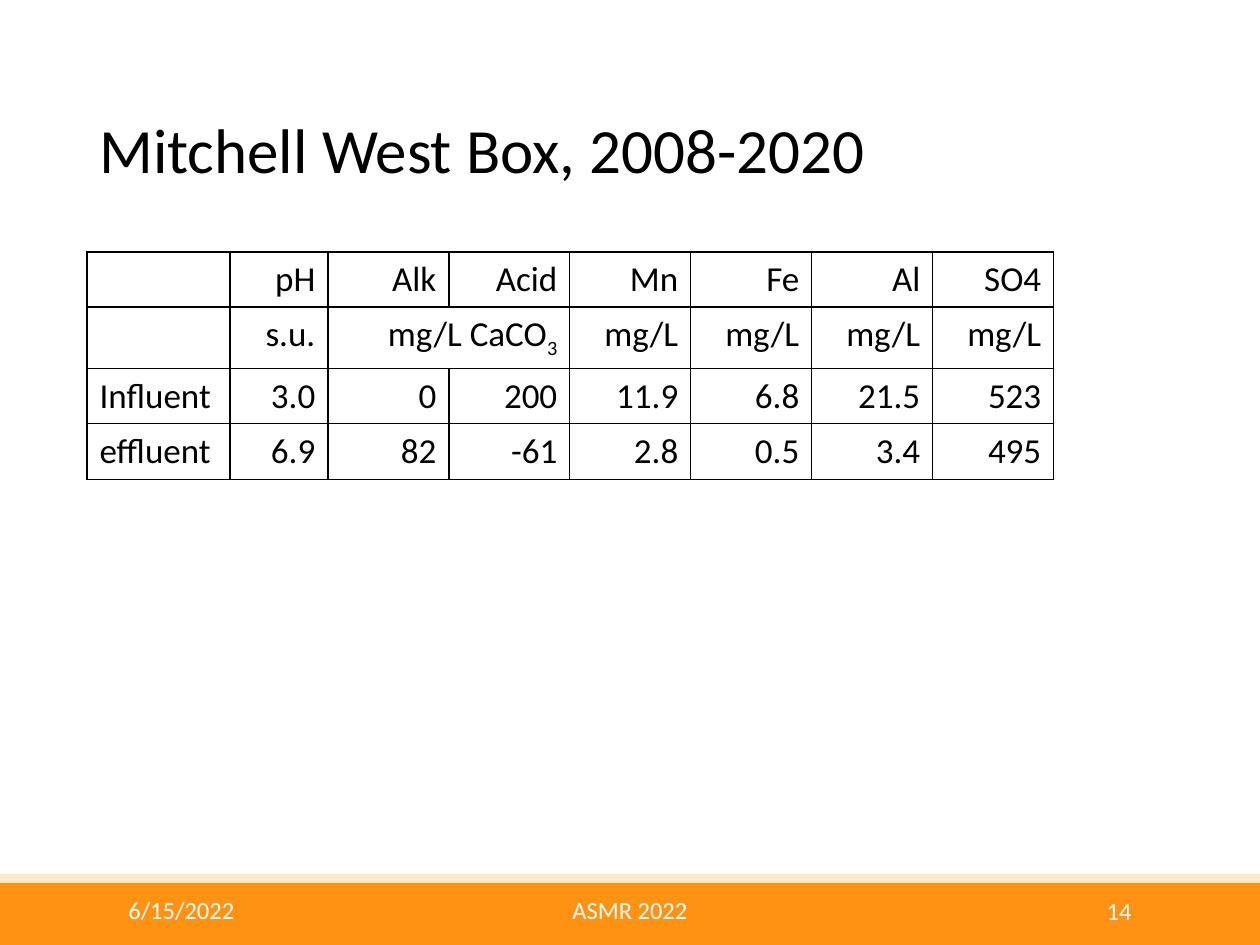
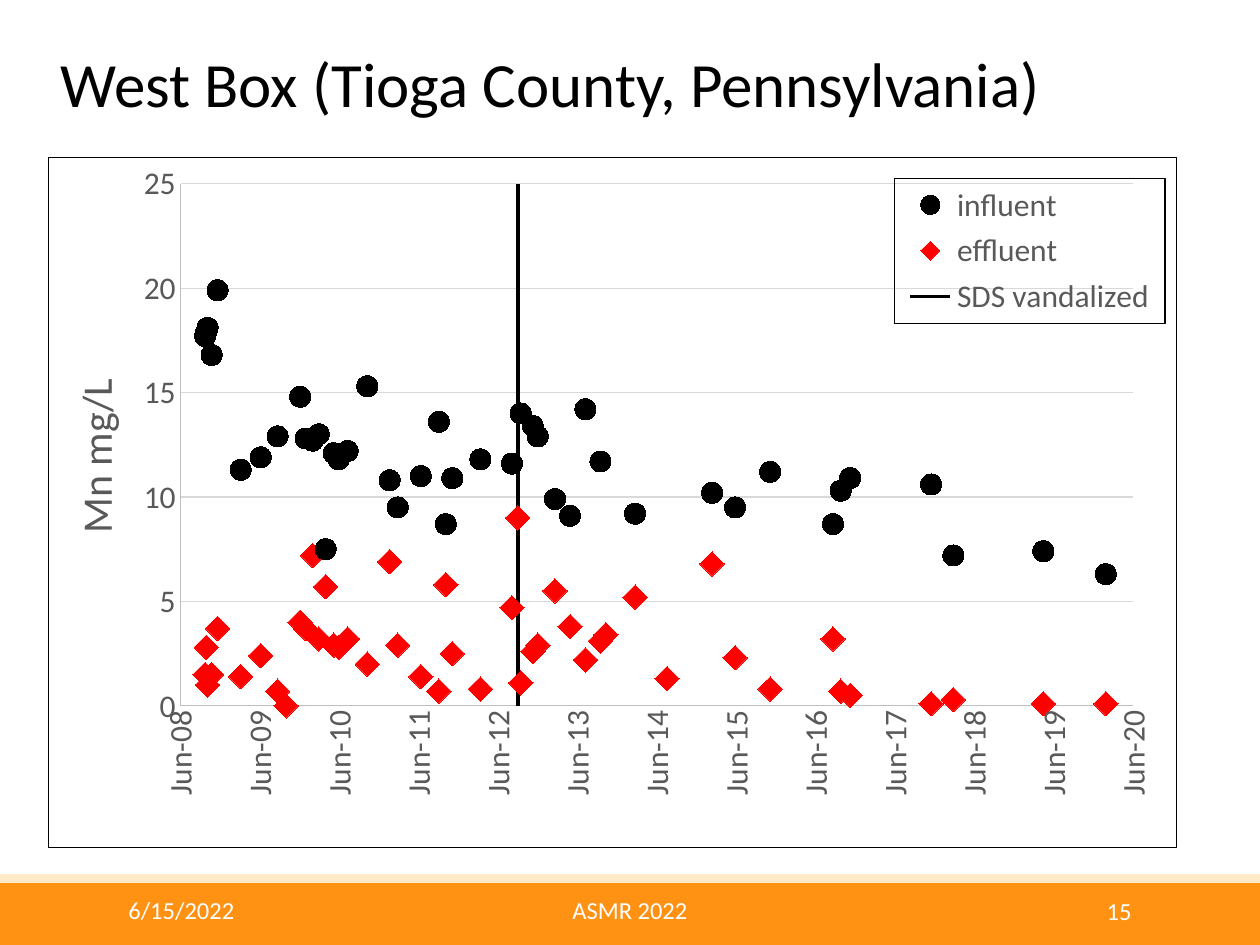
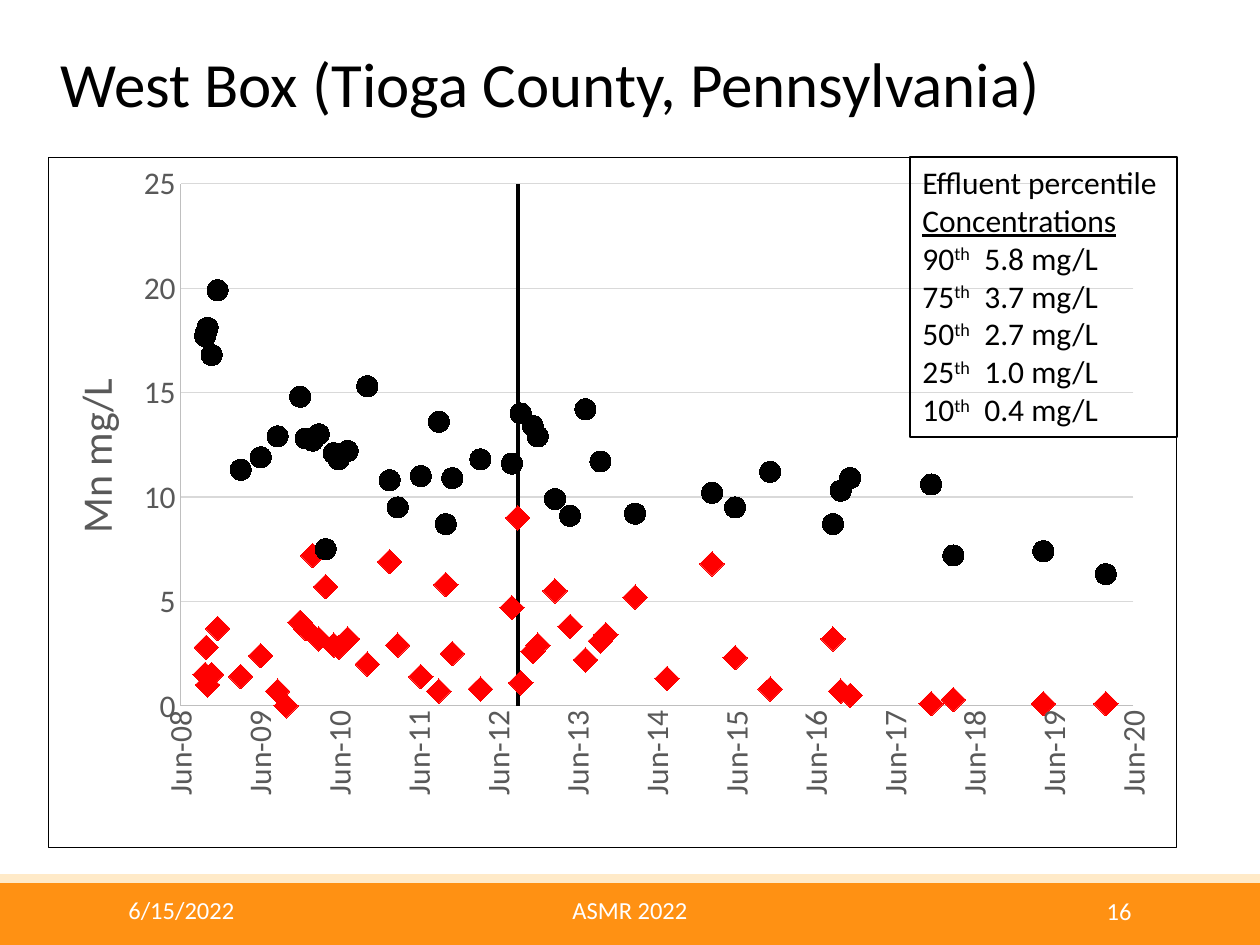
from dataclasses import dataclass
from typing import NamedTuple

from pptx import Presentation
from pptx.chart.data import XyChartData
from pptx.dml.color import RGBColor
from pptx.enum.chart import XL_CHART_TYPE as ChartType
from pptx.enum.chart import XL_LEGEND_POSITION as LegendPosition
from pptx.enum.chart import XL_MARKER_STYLE as MarkerStyle
from pptx.enum.chart import XL_TICK_MARK as TickMark
from pptx.enum.shapes import MSO_SHAPE as Shape
from pptx.enum.text import MSO_ANCHOR as Anchor
from pptx.enum.text import PP_ALIGN as Align
from pptx.oxml import parse_xml
from pptx.oxml.ns import nsdecls, qn
from pptx.util import Emu, Pt


@dataclass(frozen=True)
class Theme:
    """Colours, font and type sizes of the deck."""
    font: str = "Calibri"
    ink: str = "000000"
    paper: str = "FFFFFF"
    band: str = "FF9113"
    band_edge: str = "FFEAC8"
    effluent: str = "FF0000"
    chart_text: str = "595959"
    axis: str = "BFBFBF"
    grid: str = "D9D9D9"
    title_size: int = 36
    axis_title_size: int = 24
    table_size: int = 20
    body_size: int = 18
    footer_size: int = 14
    hairline: float = 0.75


class Box(NamedTuple):
    """A rectangle in px."""
    left: int
    top: int
    width: int
    height: int

    def inner(self, left, top, width, height):
        """Return a box placed relative to this one."""
        return Box(self.left + left, self.top + top, width, height)

    def emu(self):
        """Return the four lengths in EMU."""
        return [px(length) for length in self]


THEME = Theme()
PAGE = Box(0, 0, 1260, 945)
FOOTER = Box(0, 874, 1260, 71)
CHART = Box(48, 157, 1129, 691)
CHART_TITLE = Box(48, 58, 1163, 59)
PERCENTILE_BOX = Box(910, 157, 267, 280)
FIRST_DAY, LAST_DAY, YEAR = 39620, 44000, 365
VANDALIZED_DAY = 1550
UPRIGHT = "-5400000"
NO_SAMPLE = (None, None, None)

SAMPLES = [
    (113, 17.7, 1.5), (118, 17.9, 2.8), (124, 18.1, 1), (143, 16.8, 1.5),
    (170, 19.9, 3.7), (276, 11.3, 1.4), (368, 11.9, 2.4), (446, 12.9, 0.7),
    (485, None, 0), (550, 14.8, 4), (575, 12.8, 3.7), (607, 12.7, 7.2),
    (635, 13, 3.2), (667, 7.5, 5.7), (704, 12.1, 2.9), (727, 11.8, 2.8),
    (768, 12.2, 3.2), (858, 15.3, 2), (961, 10.8, 6.9), (998, 9.5, 2.9),
    (1104, 11, 1.4), (1187, 13.6, 0.7), (1219, 8.7, 5.8), (1249, 10.9, 2.5),
    (1378, 11.8, 0.8), (1523, 11.6, 4.7), (1550, None, 9), (1564, 14, 1.1),
    (1619, 13.4, 2.6), (1642, 12.9, 2.9), (1721, 9.9, 5.5), (1790, 9.1, 3.8),
    (1861, 14.2, 2.2), (1930, 11.7, 3.1), (1955, None, 3.4), (2089, 9.2, 5.2),
    (2236, None, 1.3), NO_SAMPLE, (2443, 10.2, 6.8), (2549, 9.5, 2.3),
    (2710, 11.2, 0.8), NO_SAMPLE, (2999, 8.7, 3.2), (3034, 10.3, 0.7),
    (3078, 10.9, 0.5), NO_SAMPLE, (3450, 10.6, 0.1), (3552, 7.2, 0.3),
    (3966, 7.4, 0.1), (4253, 6.3, 0.1), NO_SAMPLE,
]

WATER_ROWS = [
    ["", "pH", "Alk", "Acid", "Mn", "Fe", "Al", "SO4"],
    ["", "s.u.", "mg/L CaCO", "", "mg/L", "mg/L", "mg/L", "mg/L"],
    ["Influent", "3.0", "0", "200", "11.9", "6.8", "21.5", "523"],
    ["effluent", "6.9", "82", "-61", "2.8", "0.5", "3.4", "495"],
]

PERCENTILES = [("90", "5.8"), ("75", "3.7"), ("50", "2.7"), ("25", "1.0"), ("10", "0.4")]


def px(length):
    """Turn px into EMU."""
    return Emu(round(length * 914400 / 126))


def rgb(color):
    """Return a colour from its hex code."""
    return RGBColor.from_string(color)


def style_font(font, size, color=THEME.ink):
    """Set the face, size and colour of a font."""
    font.name, font.size = THEME.font, Pt(size)
    font.color.rgb = rgb(color)


def style_line(line, color, width=THEME.hairline):
    """Set the colour and width of a line."""
    line.color.rgb = rgb(color)
    line.width = Pt(width)


def add_text(page, box, text, size, color=THEME.ink, align=Align.LEFT, anchor=Anchor.TOP):
    """Add a one-paragraph text box and return the paragraph."""
    frame = page.shapes.add_textbox(*box.emu()).text_frame
    frame.word_wrap, frame.vertical_anchor = True, anchor
    frame.text = text
    para = frame.paragraphs[0]
    para.alignment = align
    style_font(para.runs[0].font, size, color)
    return para


def add_span(para, text, baseline=0):
    """Append a run, raised or lowered by a percentage of its size."""
    span = para.add_run()
    span.text = text
    if baseline:
        span._r.get_or_add_rPr().set("baseline", str(baseline * 1000))
    return span


def add_title(page, box, text):
    """Add the slide title."""
    add_text(page, box, text, THEME.title_size, anchor=Anchor.MIDDLE).line_spacing = 0.9


def add_footer(page, box, number):
    """Draw the footer band with date, event and page number."""
    edge = 9
    bands = [
        (box.inner(0, edge, box.width, box.height - edge), THEME.band),
        (box.inner(0, 0, box.width, edge), THEME.band_edge),
    ]
    for band_box, color in bands:
        band = page.shapes.add_shape(Shape.RECTANGLE, *band_box.emu())
        band.shadow.inherit = False
        band.fill.solid()
        band.fill.fore_color.rgb = rgb(color)
        band.line.fill.background()
    notes = [
        (box.inner(116, 15, 189, 50), "6/15/2022", Align.LEFT),
        (box.inner(441, 15, 378, 50), "ASMR 2022", Align.CENTER),
        (box.inner(955, 16, 189, 50), str(number), Align.RIGHT),
    ]
    for note_box, text, align in notes:
        add_text(page, note_box, text, THEME.footer_size, THEME.paper, align)


def style_cell(cell, align):
    """Give a cell no fill, thin borders and plain text."""
    cell.fill.background()
    properties = cell._tc.get_or_add_tcPr()
    for place, side in enumerate(("lnL", "lnR", "lnT", "lnB")):
        properties.insert(place, parse_xml(
            f'<a:{side} {nsdecls("a")} w="{Pt(THEME.hairline)}"><a:solidFill>'
            f'<a:srgbClr val="{THEME.ink}"/></a:solidFill></a:{side}>'))
    para = cell.text_frame.paragraphs[0]
    para.alignment = align
    for span in para.runs:
        style_font(span.font, THEME.table_size)


def add_water_table(page, box):
    """Add the table of water chemistry."""
    widths, heights = [143, 98] + [121] * 6, [55, 62, 55, 56]
    table = page.shapes.add_table(len(heights), len(widths), *box.emu()).table
    table.first_row = table.horz_banding = False
    for column, width in zip(table.columns, widths):
        column.width = px(width)
    for row, height in zip(table.rows, heights):
        row.height = px(height)
    for row, texts in enumerate(WATER_ROWS):
        for column, text in enumerate(texts):
            cell = table.cell(row, column)
            if text:
                cell.text = text
            if text.endswith("CaCO"):
                add_span(cell.text_frame.paragraphs[0], "3", -25)
                cell.merge(table.cell(row, column + 1))
            style_cell(cell, Align.RIGHT if column else Align.LEFT)


def set_layout(element, after, x, y, width=None, height=None):
    """Place a chart part by fractions of the chart, after the named child if any."""
    for old in element.findall(qn("c:layout")):
        element.remove(old)
    target = '<c:layoutTarget val="inner"/>' if after is None else ""
    modes = '<c:xMode val="edge"/><c:yMode val="edge"/>'
    sizes = [("x", x), ("y", y), ("w", width), ("h", height)]
    values = "".join(f'<c:{name} val="{value}"/>' for name, value in sizes if value is not None)
    layout = parse_xml(f'<c:layout {nsdecls("c")}><c:manualLayout>{target}{modes}{values}'
                       '</c:manualLayout></c:layout>')
    if after is None:
        element.insert(0, layout)
    else:
        element.find(qn(after)).addnext(layout)


def add_frame(element, fill):
    """Give a chart part a fill and a thin black border."""
    element.find(qn("c:txPr")).addprevious(parse_xml(
        f'<c:spPr {nsdecls("c", "a")}>{fill}<a:ln w="{Pt(THEME.hairline)}"><a:solidFill>'
        f'<a:srgbClr val="{THEME.ink}"/></a:solidFill></a:ln></c:spPr>'))


def manganese_data():
    """Return the dated manganese values, with equal row counts for both sampling points."""
    data = XyChartData()
    for column, name in enumerate(("influent", "effluent"), start=1):
        series = data.add_series(name)
        for sample in SAMPLES:
            level = sample[column]
            series.add_data_point(None if level is None else FIRST_DAY + sample[0], level)
    event = data.add_series("SDS vandalized")
    for level in (25, 0):
        event.add_data_point(FIRST_DAY + VANDALIZED_DAY, level)
    return data


def style_series(chart):
    """Show the samples as markers and the event as a line."""
    influent, effluent, event = chart.plots[0].series
    looks = [(influent, MarkerStyle.CIRCLE, 12, THEME.ink),
             (effluent, MarkerStyle.DIAMOND, 14, THEME.effluent)]
    for series, style, size, color in looks:
        series.format.line.fill.background()
        marker = series.marker
        marker.style, marker.size = style, size
        marker.format.fill.solid()
        marker.format.fill.fore_color.rgb = rgb(color)
        marker.format.line.fill.background()
    event.marker.style = MarkerStyle.NONE
    style_line(event.format.line, THEME.ink, 2)


def style_axes(chart):
    """Set the scales, labels and lines of the axes."""
    dates, levels = chart.category_axis, chart.value_axis
    scales = [(dates, FIRST_DAY, LAST_DAY, YEAR, r"[$-409]mmm\-yy;@"), (levels, 0, 25, 5, "0")]
    for axis, low, high, step, number_format in scales:
        axis.minimum_scale, axis.maximum_scale, axis.major_unit = low, high, step
        axis.major_tick_mark = axis.minor_tick_mark = TickMark.NONE
        labels = axis.tick_labels
        labels.number_format, labels.number_format_is_linked = number_format, False
        style_font(labels.font, THEME.body_size, THEME.chart_text)
        style_line(axis.format.line, THEME.axis)
    dates.has_major_gridlines = False
    dates._element.find(qn("c:txPr")).find(qn("a:bodyPr")).set("rot", UPRIGHT)
    levels.has_major_gridlines = True
    style_line(levels.major_gridlines.format.line, THEME.grid)

    title = levels.axis_title
    frame = title.text_frame
    frame.text = "Mn mg/L"
    font = frame.paragraphs[0].runs[0].font
    style_font(font, THEME.axis_title_size, THEME.chart_text)
    font.bold = False
    body = frame._txBody.find(qn("a:bodyPr"))
    body.set("rot", UPRIGHT)
    body.set("vert", "horz")
    set_layout(title._element, "c:tx", 0.01, 0.31)


def add_legend(chart):
    """Lay a framed legend over the plot."""
    chart.has_legend = True
    legend = chart.legend
    legend.position, legend.include_in_layout = LegendPosition.RIGHT, True
    style_font(legend.font, THEME.body_size, THEME.chart_text)
    add_frame(legend._element, "<a:noFill/>")
    set_layout(legend._element, "c:legendPos", 0.75, 0.03, 0.24, 0.21)


def add_manganese_chart(page, box, with_legend):
    """Add the scatter chart of manganese over time."""
    chart = page.shapes.add_chart(ChartType.XY_SCATTER, *box.emu(), manganese_data()).chart
    chart.has_title = chart.has_legend = False
    style_font(chart.font, 10)
    chart.plots[0].vary_by_categories = False
    add_frame(chart._chartSpace,
              f'<a:solidFill><a:srgbClr val="{THEME.paper}"/></a:solidFill>')
    plot_area = chart._chartSpace.find(qn("c:chart")).find(qn("c:plotArea"))
    set_layout(plot_area, None, 0.117, 0.038, 0.845, 0.757)
    style_series(chart)
    style_axes(chart)
    if with_legend:
        add_legend(chart)


def add_percentiles(page, box):
    """Add the framed list of effluent percentiles."""
    panel = page.shapes.add_textbox(*box.emu())
    style_line(panel.line, THEME.ink)
    frame = panel.text_frame
    frame.word_wrap = True
    frame.text = "Effluent percentile\nConcentrations"
    frame.paragraphs[1].runs[0].font.underline = True
    for rank, level in PERCENTILES:
        para = frame.add_paragraph()
        para._p.get_or_add_pPr().append(parse_xml(
            f'<a:tabLst {nsdecls("a")}><a:tab pos="{px(62)}" algn="l"/></a:tabLst>'))
        add_span(para, rank)
        add_span(para, "th", 30)
        add_span(para, f"\t{level} mg/L")
    for para in frame.paragraphs:
        for span in para.runs:
            style_font(span.font, THEME.body_size)


def add_table_page(page):
    """Fill the slide with the water chemistry table."""
    add_title(page, Box(87, 88, 1086, 131), "Mitchell West Box, 2008-2020")
    add_water_table(page, Box(87, 252, 967, 228))


def add_chart_page(page, with_legend):
    """Fill a slide with the manganese chart."""
    add_title(page, CHART_TITLE, "West Box (Tioga County, Pennsylvania)")
    add_manganese_chart(page, CHART, with_legend)


def main():
    """Build the deck and save it."""
    deck = Presentation()
    deck.slide_width, deck.slide_height = px(PAGE.width), px(PAGE.height)
    pages = [deck.slides.add_slide(deck.slide_layouts[6]) for _ in range(3)]
    for number, page in enumerate(pages, start=14):
        add_footer(page, FOOTER, number)
    table_page, legend_page, percentile_page = pages
    add_table_page(table_page)
    add_chart_page(legend_page, True)
    add_chart_page(percentile_page, False)
    add_percentiles(percentile_page, PERCENTILE_BOX)
    deck.save("out.pptx")


if __name__ == "__main__":
    main()
